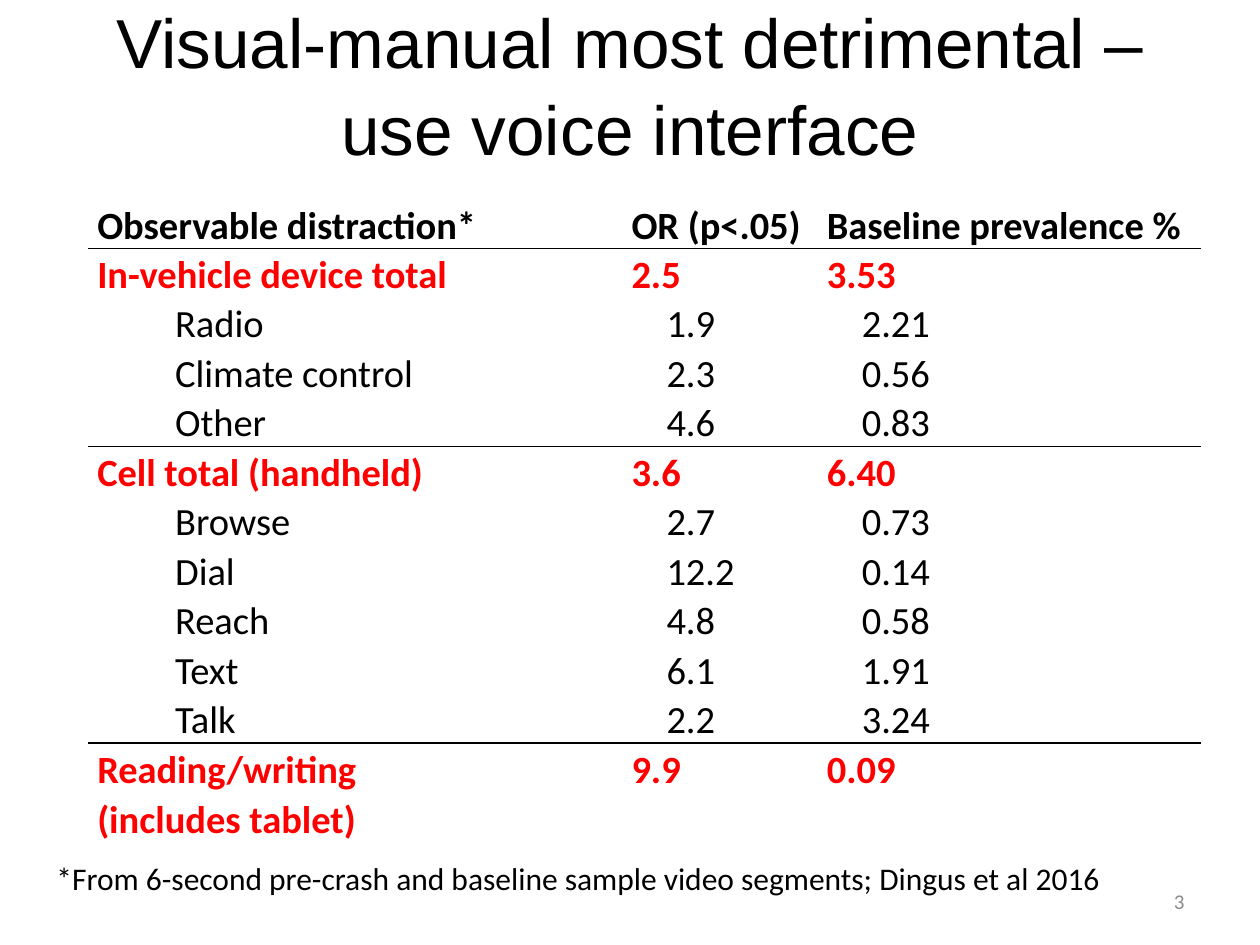
from lxml.etree import SubElement
from pptx import Presentation
from pptx.dml.color import RGBColor
from pptx.enum.text import MSO_ANCHOR, PP_ALIGN
from pptx.oxml.ns import qn
from pptx.util import Pt

BLACK, RED, WHITE, GREY = "000000", "FF0000", "FFFFFF", "8C8C8C"
HEADER = ("Observable distraction*", "OR (p<.05)", "Baseline prevalence %")
GROUPS = [
    [("In-vehicle device total", "2.5", "3.53"),
     ("Radio", "1.9", "2.21"),
     ("Climate control", "2.3", "0.56"),
     ("Other", "4.6", "0.83")],
    [("Cell total (handheld)", "3.6", "6.40"),
     ("Browse", "2.7", "0.73"),
     ("Dial", "12.2", "0.14"),
     ("Reach", "4.8", "0.58"),
     ("Text", "6.1", "1.91"),
     ("Talk", "2.2", "3.24")],
    [("Reading/writing\n(includes tablet)", "9.9", "0.09")],
]
COLUMN_WIDTHS = (305.3, 111.6, 218.2)
DETAIL_INDENTS = (44.5, 20, 20)
ROW_HEIGHT = 26.6
CELL_MARGIN = 5


def color(value):
    return RGBColor.from_string(value)


def style_paragraph(para, size, font, value, bold=False, spacing=None):
    para.line_spacing = spacing
    for span in para.runs:
        span.font.size = Pt(size)
        span.font.name = font
        span.font.bold = bold
        span.font.color.rgb = color(value)


def add_text(page, place, text, size, font="Calibri", value=BLACK,
             align=PP_ALIGN.LEFT, anchor=MSO_ANCHOR.TOP, spacing=None):
    box = page.shapes.add_textbox(*map(Pt, place))
    frame = box.text_frame
    frame.word_wrap = True
    frame.vertical_anchor = anchor
    frame.text = text
    para = frame.paragraphs[0]
    para.alignment = align
    style_paragraph(para, size, font, value, spacing=spacing)


def add_borders(cell, sides):
    properties = cell._tc.get_or_add_tcPr()
    for position, side in enumerate(sides):
        line = properties.makeelement(qn(f"a:{side}"), {"w": str(Pt(1))})
        fill = SubElement(line, qn("a:solidFill"))
        SubElement(fill, qn("a:srgbClr"), val=BLACK)
        properties.insert(position, line)


def fill_cell(cell, text, value, bold, indent, sides):
    cell.margin_left = Pt(CELL_MARGIN + indent)
    cell.margin_right = Pt(CELL_MARGIN)
    cell.margin_top = cell.margin_bottom = 0
    cell.fill.solid()
    cell.fill.fore_color.rgb = color(WHITE)
    cell.text_frame.text = text
    for para in cell.text_frame.paragraphs:
        style_paragraph(para, 22, "Calibri", value, bold, 1.07)
    add_borders(cell, sides)


def table_rows():
    yield HEADER, BLACK, True, ["lnB"]
    for group in GROUPS:
        for index, texts in enumerate(group):
            total = index == 0
            sides = ["lnT"] if total else []
            if index == len(group) - 1 and group is not GROUPS[-1]:
                sides.append("lnB")
            yield texts, RED if total else BLACK, total, sides


def add_distraction_table(page):
    rows = list(table_rows())
    heights = [ROW_HEIGHT * (texts[0].count("\n") + 1) for texts, *_ in rows]
    table = page.shapes.add_table(
        len(rows), len(COLUMN_WIDTHS), Pt(50.6), Pt(113.8),
        Pt(sum(COLUMN_WIDTHS)), Pt(sum(heights))).table
    table.first_row = False
    table.horz_banding = False
    for column, width in zip(table.columns, COLUMN_WIDTHS):
        column.width = Pt(width)
    for row, height, (texts, value, bold, sides) in zip(table.rows, heights, rows):
        row.height = Pt(height)
        for cell, text, indent in zip(row.cells, texts, DETAIL_INDENTS):
            fill_cell(cell, text, value, bold, 0 if bold else indent, sides)


def main():
    deck = Presentation()
    deck.slide_width, deck.slide_height = Pt(720), Pt(540)
    page = deck.slides.add_slide(deck.slide_layouts[6])
    add_text(page, (516, 500.5, 168, 28.8), "3", 12, value=GREY,
             align=PP_ALIGN.RIGHT, anchor=MSO_ANCHOR.MIDDLE)
    add_distraction_table(page)
    add_text(page, (25.2, 487.6, 630.7, 29),
             "*From 6-second pre-crash and baseline sample video segments; "
             "Dingus et al 2016", 18)
    add_text(page, (36, 2.2, 648, 90),
             "Visual-manual most detrimental – use voice interface", 39.6,
             font="Arial", align=PP_ALIGN.CENTER, anchor=MSO_ANCHOR.MIDDLE,
             spacing=1.04)
    deck.save("out.pptx")


if __name__ == "__main__":
    main()
